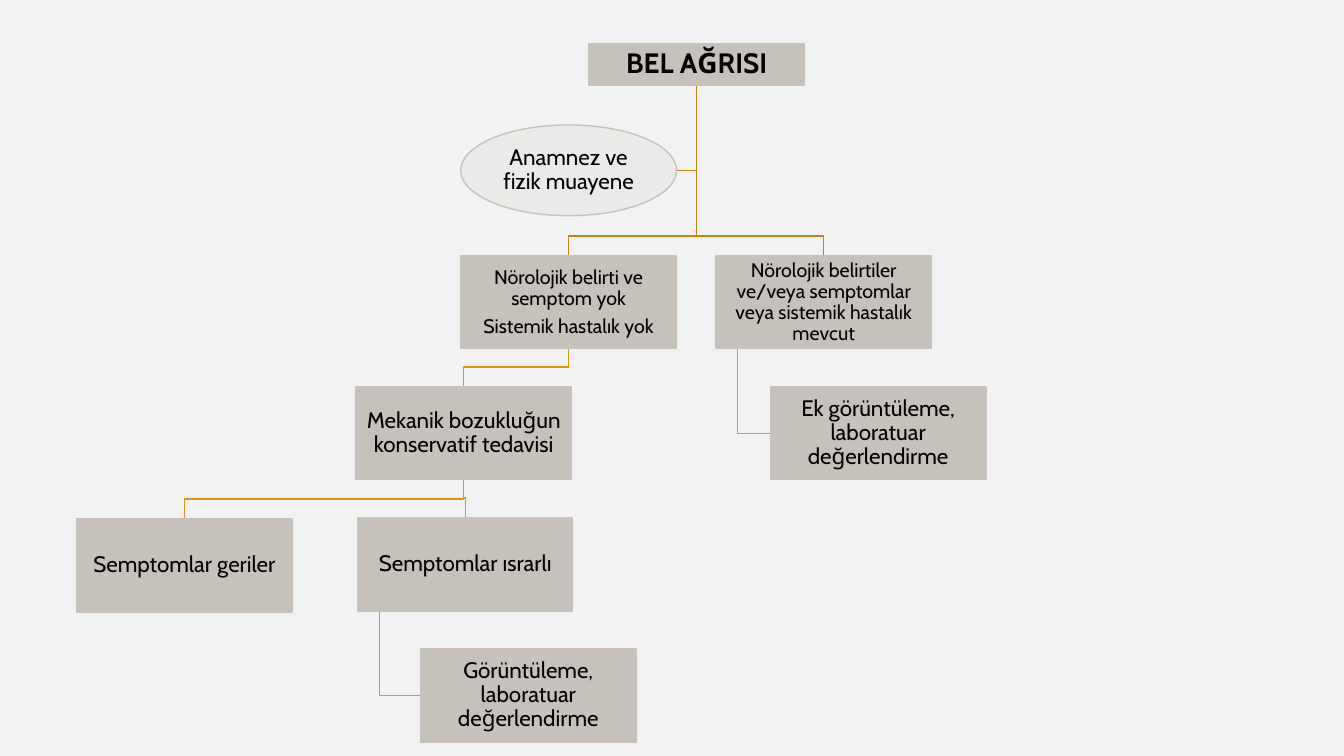
from dataclasses import dataclass

from pptx import Presentation
from pptx.dml.color import RGBColor
from pptx.enum.shapes import MSO_SHAPE as Preset
from pptx.enum.text import MSO_ANCHOR as Anchor, MSO_AUTO_SIZE as AutoSize, PP_ALIGN as Align
from pptx.shapes.autoshape import Shape
from pptx.slide import Slide
from pptx.util import Inches, Pt

FONT = "Cabin"
BACKGROUND, BOX_FILL, OVAL_FILL = "F2F2F2", "C6C1BA", "ECEAE8"
UPPER_LINE, LOWER_LINE = "C58217", "DF931A"
INSET = 0.01
BEND_GAP = 0.2  # from the bend of a branch to the child's top
SPACING = 0.35  # paragraph gap as a share of the text size


@dataclass(frozen=True)
class Node:
    left: float
    top: float
    texts: tuple[str, ...]
    size: int = 16
    width: float = 2.14
    height: float = 0.92
    fill: str = BOX_FILL
    preset: Preset = Preset.RECTANGLE
    bold: bool = False

    @property
    def centre(self) -> float:
        return self.left + self.width / 2

    @property
    def middle(self) -> float:
        return self.top + self.height / 2

    @property
    def right(self) -> float:
        return self.left + self.width

    @property
    def bottom(self) -> float:
        return self.top + self.height


Route = list[tuple[float, float]]


def colour(code: str) -> RGBColor:
    return RGBColor.from_string(code)


# Routes between nodes
def branch(parent: Node, child: Node) -> Route:
    """From the parent's bottom, across, and down to the child's top."""
    bend = child.top - BEND_GAP
    return [(parent.centre, parent.bottom), (parent.centre, bend),
            (child.centre, bend), (child.centre, child.top)]


def hang(parent: Node, child: Node) -> Route:
    """From near the parent's left corner down and right to the child's side."""
    start = parent.left + parent.width / 10
    return [(start, parent.bottom), (start, child.middle), (child.left, child.middle)]


def aside(parent: Node, child: Node) -> Route:
    """From the parent's bottom down and left to the child's side."""
    return [(parent.centre, parent.bottom), (parent.centre, child.middle),
            (child.right, child.middle)]


def draw_route(page: Slide, route: Route, line_colour: str) -> None:
    start, *rest = [(Inches(x), Inches(y)) for x, y in route]
    builder = page.shapes.build_freeform(*start, scale=1.0)
    builder.add_line_segments(rest, close=False)
    line = builder.convert_to_shape()
    line.shadow.inherit = False
    line.fill.background()
    line.line.color.rgb = colour(line_colour)
    line.line.width = Pt(1)


# Boxes and their text
def write_texts(box: Shape, node: Node) -> None:
    frame = box.text_frame
    frame.word_wrap = True
    frame.auto_size = AutoSize.NONE
    frame.vertical_anchor = Anchor.MIDDLE
    frame.margin_left = frame.margin_right = Inches(INSET)
    frame.margin_top = frame.margin_bottom = Inches(INSET)
    for index, text in enumerate(node.texts):
        para = frame.add_paragraph() if index else frame.paragraphs[0]
        para.alignment = Align.CENTER
        para.line_spacing = 0.9
        para.space_before = Pt(node.size * SPACING if index else 0)
        span = para.add_run()
        span.text = text
        span.font.name = FONT
        span.font.size = Pt(node.size)
        span.font.bold = node.bold
        span.font.color.rgb = colour("000000")


def format_box(box: Shape, node: Node) -> None:
    box.left, box.top = Inches(node.left), Inches(node.top)
    box.width, box.height = Inches(node.width), Inches(node.height)
    box.shadow.inherit = False
    box.fill.solid()
    box.fill.fore_color.rgb = colour(node.fill)
    box.line.color.rgb = colour(BOX_FILL)
    box.line.width = Pt(1)
    write_texts(box, node)


def draw_node(page: Slide, node: Node) -> None:
    box = page.shapes.add_shape(node.preset, 0, 0, Inches(node.width), Inches(node.height))
    format_box(box, node)


# Nodes of the decision tree
PAIN = Node(5.84, 0.43, ("BEL AĞRISI",), size=20, height=0.42, bold=True)
EXAM = Node(4.57, 1.24, ("Anamnez ve fizik muayene",), height=0.9,
            fill=OVAL_FILL, preset=Preset.OVAL)
NO_SIGNS = Node(4.57, 2.54, ("Nörolojik belirti ve semptom yok", "Sistemik hastalık yok"), size=14)
SIGNS = Node(7.1, 2.54, (
    "Nörolojik belirtiler ve/veya semptomlar veya sistemik hastalık mevcut",), size=14)
TREATMENT = Node(3.53, 3.84, ("Mekanik bozukluğun konservatif tedavisi",))
MORE_TESTS = Node(7.64, 3.84, ("Ek görüntüleme, laboratuar değerlendirme",))
RELIEF = Node(0.76, 5.15, ("Semptomlar geriler",))
PERSISTENT = Node(3.55, 5.14, ("Semptomlar ısrarlı",), width=2.13)
TESTS = Node(4.17, 6.44, ("Görüntüleme, laboratuar değerlendirme",))

NODES = [EXAM, NO_SIGNS, SIGNS, TREATMENT, MORE_TESTS, RELIEF, PERSISTENT, TESTS]
LINKS = [
    (aside, PAIN, EXAM),
    (branch, PAIN, NO_SIGNS),
    (branch, PAIN, SIGNS),
    (branch, NO_SIGNS, TREATMENT),
    (hang, SIGNS, MORE_TESTS),
    (branch, TREATMENT, RELIEF),
    (branch, TREATMENT, PERSISTENT),
    (hang, PERSISTENT, TESTS),
]


def main() -> None:
    deck = Presentation()
    deck.slide_width, deck.slide_height = Inches(13.33), Inches(7.5)
    page = deck.slides.add_slide(deck.slide_layouts[5])
    page.background.fill.solid()
    page.background.fill.fore_color.rgb = colour(BACKGROUND)

    format_box(page.shapes.title, PAIN)
    for route, parent, child in LINKS:
        draw_route(page, route(parent, child), UPPER_LINE if parent is PAIN else LOWER_LINE)
    for node in NODES:
        draw_node(page, node)

    deck.save("out.pptx")


if __name__ == "__main__":
    main()
